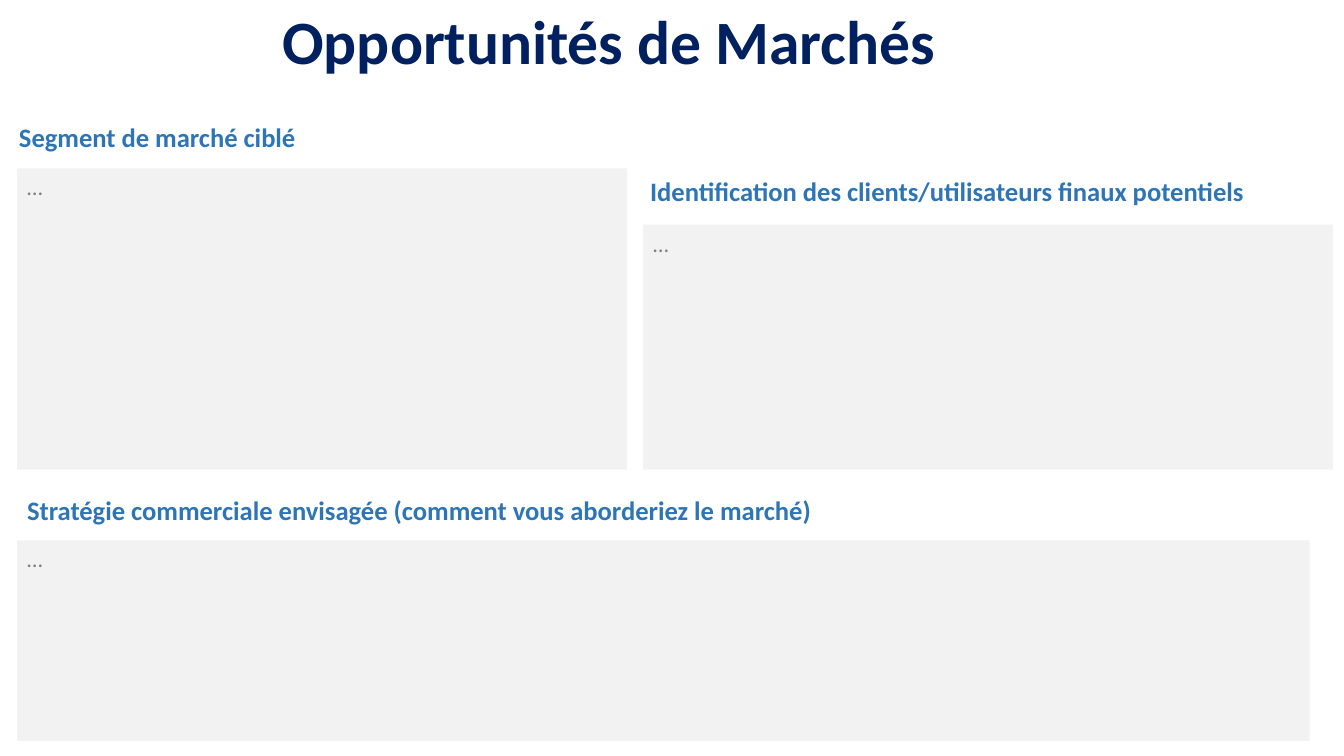
from pptx import Presentation
from pptx.dml.color import RGBColor
from pptx.enum.shapes import MSO_SHAPE
from pptx.enum.text import MSO_ANCHOR, PP_ALIGN
from pptx.util import Inches, Pt

COLORS = {"title": "002060", "heading": "2E75B6", "panel": "F2F2F2", "body": "808080"}
FONT = "Calibri"
HEADING_HEIGHT = 0.42

# Heading, heading position and width, panel box (inches)
SECTIONS = [
    ("Segment de marché ciblé", (0.09, 1.15, 6.84), (0.17, 1.67, 6.05, 2.99)),
    ("Identification des clients/utilisateurs finaux potentiels",
     (6.35, 1.69, 6.99), (6.38, 2.23, 6.84, 2.43)),
    ("Stratégie commerciale envisagée (comment vous aborderiez le marché)",
     (0.17, 4.85, 9.81), (0.17, 5.36, 12.82, 1.99)),
]


def inches(box):
    return [Inches(length) for length in box]


def write(frame, text, size, color, bold=False, align=PP_ALIGN.LEFT, anchor=MSO_ANCHOR.TOP):
    frame.word_wrap = True
    frame.vertical_anchor = anchor
    paragraph = frame.paragraphs[0]
    paragraph.alignment = align
    run = paragraph.add_run()
    run.text = text
    run.font.name = FONT
    run.font.size = Pt(size)
    run.font.bold = bold
    run.font.color.rgb = RGBColor.from_string(COLORS[color])
    return paragraph


def add_title(slide, box):
    title = slide.shapes.title
    title.left, title.top, title.width, title.height = inches(box)
    paragraph = write(title.text_frame, "Opportunités de Marchés", 44, "title",
                      bold=True, anchor=MSO_ANCHOR.MIDDLE)
    paragraph.line_spacing = 0.9


def add_section(slide, heading_text, heading_place, panel_box):
    # Grey answer panel
    panel = slide.shapes.add_shape(MSO_SHAPE.RECTANGLE, *inches(panel_box))
    panel.shadow.inherit = False
    panel.fill.solid()
    panel.fill.fore_color.rgb = RGBColor.from_string(COLORS["panel"])
    panel.line.fill.background()
    write(panel.text_frame, "…", 16, "body", align=PP_ALIGN.JUSTIFY)

    # Heading above the panel
    heading = slide.shapes.add_textbox(*inches((*heading_place, HEADING_HEIGHT)))
    write(heading.text_frame, heading_text, 19, "heading", bold=True)


def main():
    deck = Presentation()
    deck.slide_width, deck.slide_height = Inches(13.33), Inches(7.5)
    slide = deck.slides.add_slide(deck.slide_layouts[5])
    add_title(slide, (2.7, 0.06, 8.75, 0.77))
    for section in SECTIONS:
        add_section(slide, *section)
    deck.save("out.pptx")


if __name__ == "__main__":
    main()
